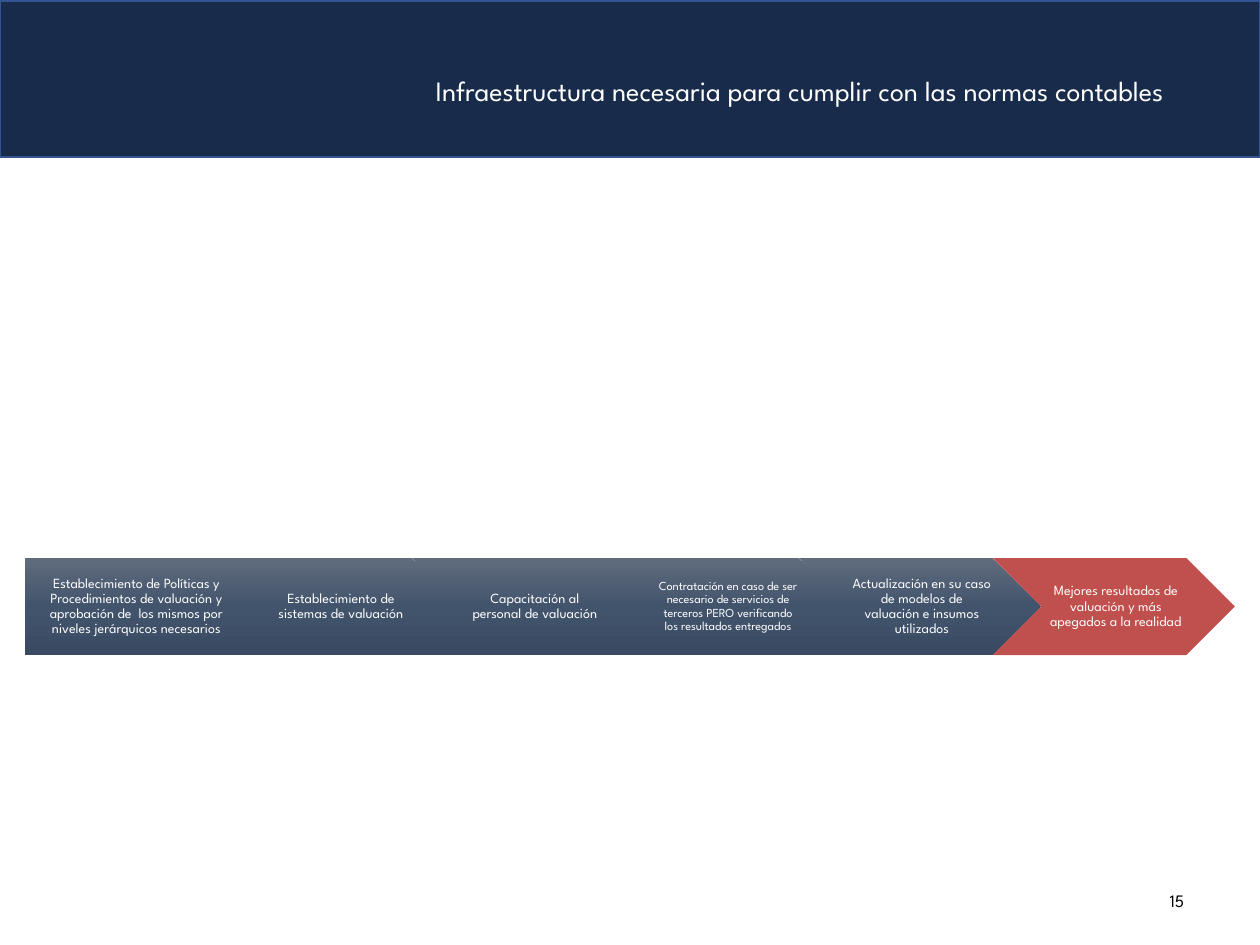
from copy import deepcopy
from dataclasses import dataclass

from pptx import Presentation
from pptx.dml.color import RGBColor
from pptx.enum.shapes import MSO_SHAPE
from pptx.enum.text import MSO_ANCHOR, PP_ALIGN
from pptx.oxml.ns import qn
from pptx.util import Emu, Pt

FONT = "League Spartan"
WHITE, BLACK, RED = "FFFFFF", "000000", "C0504D"
NAVY, EDGE = "182B4A", "325491"
SLATE = ((0, "606B7D"), (0.5, "42546C"), (1, "394A62"))
LEFT, TOP, WIDTH, HEIGHT = 25, 558, 242, 97
POINT = HEIGHT // 2


@dataclass
class Box:
    x: int
    y: int
    w: int
    h: int

    def place(self) -> list[Emu]:
        return [px(n) for n in (self.x, self.y, self.w, self.h)]


@dataclass
class Step:
    text: str
    size: int = 8
    fill: str = ""


STEPS = [
    Step("Establecimiento de Políticas y Procedimientos de valuación y "
         "aprobación de  los mismos por niveles jerárquicos necesarios"),
    Step("Establecimiento de sistemas de valuación"),
    Step("Capacitación al personal de valuación"),
    Step("Contratación en caso de ser necesario de servicios de terceros "
         "PERO verificando los resultados entregados", size=7),
    Step("Actualización en su caso de modelos de valuación e insumos utilizados"),
    Step("Mejores resultados de valuación y más apegados a la realidad", fill=RED),
]


def px(n: int) -> Emu:
    return Emu(round(n * 914400 / 126))


def color(code: str) -> RGBColor:
    return RGBColor.from_string(code)


def shade(shape) -> None:
    fill = shape.fill
    fill.gradient()
    fill.gradient_angle = 270
    stops = shape.element.spPr.find(qn("a:gradFill")).find(qn("a:gsLst"))
    stops.insert(1, deepcopy(stops[0]))
    for stop, (place, code) in zip(fill.gradient_stops, SLATE):
        stop.position = place
        stop.color.rgb = color(code)


def draw(slide, kind: MSO_SHAPE, box: Box, fill: str = "", line: str = ""):
    shape = slide.shapes.add_shape(kind, *box.place())
    shape.shadow.inherit = False
    if fill:
        shape.fill.solid()
        shape.fill.fore_color.rgb = color(fill)
    else:
        shade(shape)
    if line:
        shape.line.color.rgb = color(line)
        shape.line.width = Pt(1)
    else:
        shape.line.fill.background()
    return shape


def write(slide, box: Box, text: str, size: int, ink: str, align: PP_ALIGN,
          pads: tuple[int, int, int, int], gap: float = 1.0) -> None:
    frame = slide.shapes.add_textbox(*box.place()).text_frame
    frame.word_wrap = True
    frame.vertical_anchor = MSO_ANCHOR.MIDDLE
    (frame.margin_left, frame.margin_top,
     frame.margin_right, frame.margin_bottom) = map(px, pads)
    para = frame.paragraphs[0]
    para.text = text
    para.alignment = align
    para.line_spacing = gap
    para.font.name = FONT
    para.font.size = Pt(size)
    para.font.color.rgb = color(ink)


def chain(slide) -> None:
    for i, step in enumerate(STEPS):
        x = LEFT + i * WIDTH * 4 // 5
        kind = MSO_SHAPE.CHEVRON if i else MSO_SHAPE.PENTAGON
        draw(slide, kind, Box(x, TOP, WIDTH, HEIGHT), step.fill)
        if i:
            area = Box(x + POINT, TOP, WIDTH - 2 * POINT, HEIGHT)
        else:
            area = Box(x, TOP, WIDTH - POINT // 2, HEIGHT)
        pads = (5 if i else 6, 3, 1, 3)
        write(slide, area, step.text, step.size, WHITE, PP_ALIGN.CENTER, pads, 0.9)


def main() -> None:
    deck = Presentation()
    deck.slide_width, deck.slide_height = px(1260), px(945)
    slide = deck.slides.add_slide(deck.slide_layouts[6])
    draw(slide, MSO_SHAPE.RECTANGLE, Box(0, 1, 1260, 156), NAVY, EDGE)
    write(slide, Box(903, 876, 294, 50), "15", 10, BLACK, PP_ALIGN.RIGHT,
          (13, 6, 13, 6))
    chain(slide)
    write(slide, Box(91, 16, 1086, 183),
          "Infraestructura necesaria para cumplir con las normas contables",
          16, WHITE, PP_ALIGN.RIGHT, (13, 6, 13, 36), 0.9)
    deck.save("out.pptx")


if __name__ == "__main__":
    main()
